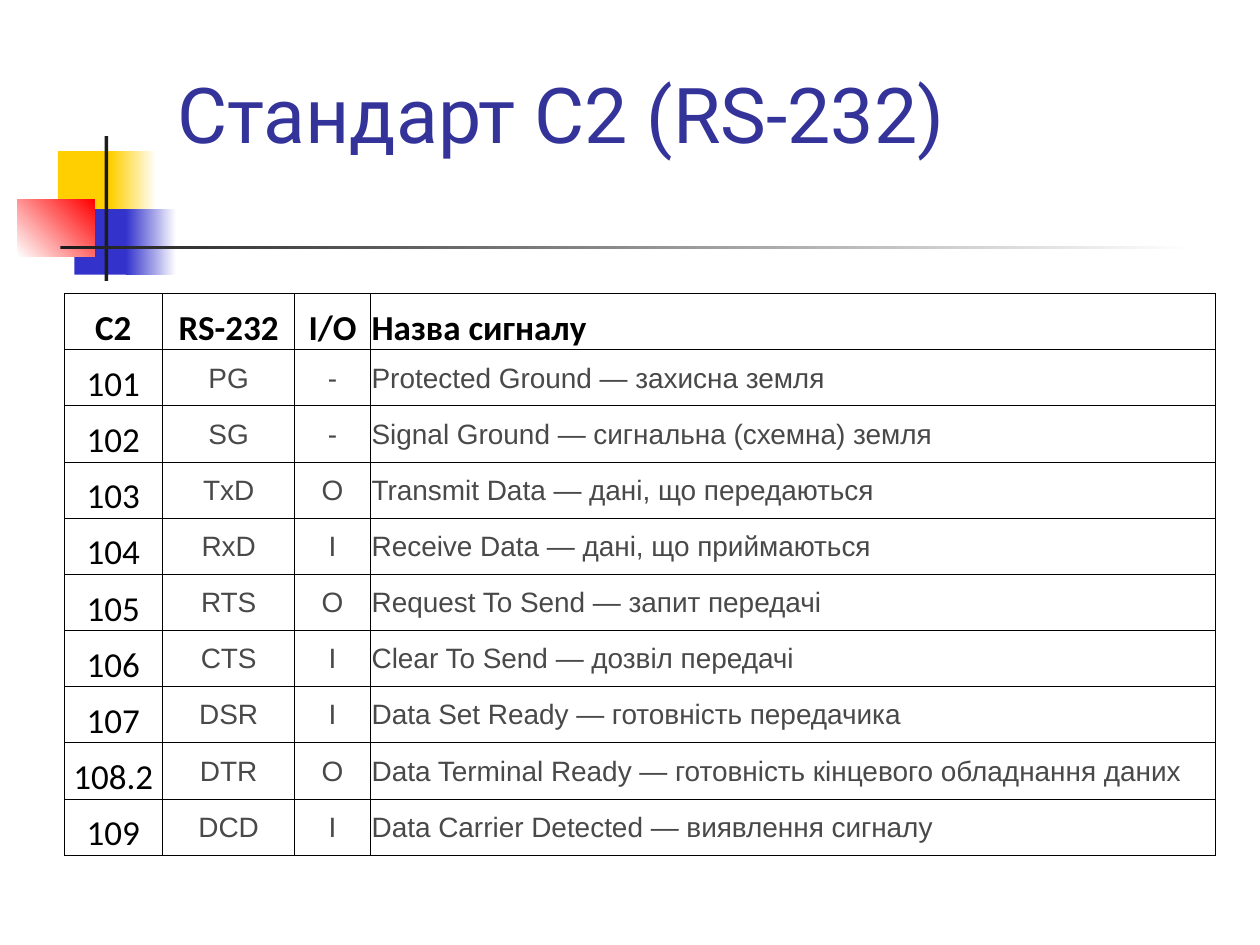
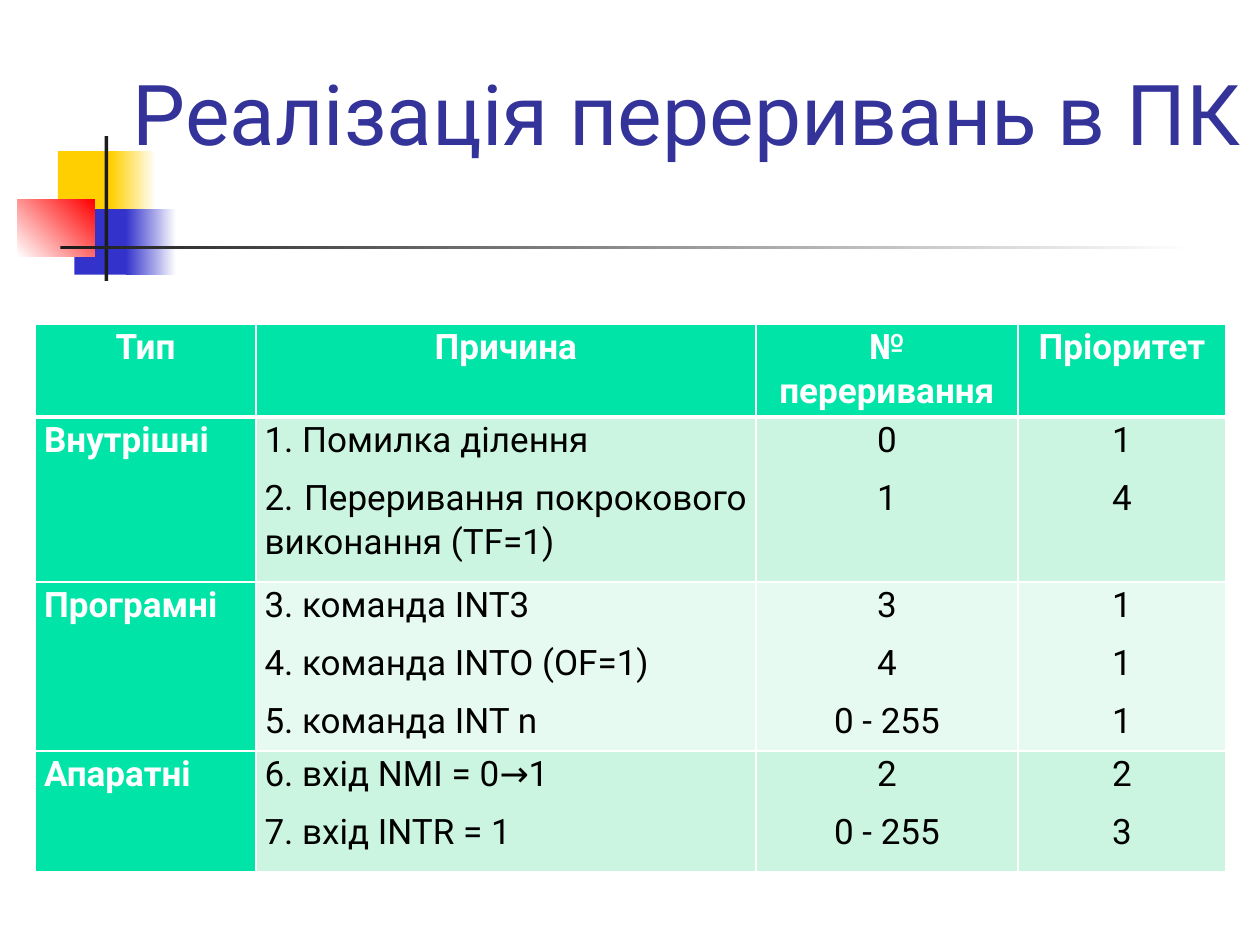
from lxml.etree import SubElement
from pptx import Presentation
from pptx.dml.color import RGBColor
from pptx.enum.shapes import MSO_SHAPE
from pptx.enum.text import MSO_ANCHOR, MSO_AUTO_SIZE, PP_ALIGN
from pptx.oxml.ns import qn
from pptx.util import Inches, Pt

# Shared look
WHITE, BLACK, DARK = "FFFFFF", "000000", "1C1C1C"
YELLOW, BLUE, RED = "FFCF01", "3333CC", "FF0000"
NAVY, GREY, GREEN = "333399", "494949", "00E4A8"
BANDS = ["CCF5E1", "E7FAF1"]
LEFT, MID, JUST = PP_ALIGN.LEFT, PP_ALIGN.CENTER, PP_ALIGN.JUSTIFY

# Corner motif: left, top, width, height, colours (two make a gradient), angle
MOTIF = [
    (0.46, 1.2, 0.48, 0.52, [YELLOW], 0),
    (0.88, 1.2, 0.36, 0.52, [YELLOW, WHITE], 0),
    (0.59, 1.66, 0.46, 0.52, [BLUE], 0),
    (1, 1.66, 0.4, 0.52, [BLUE, WHITE], 0),
    (0.14, 1.58, 0.61, 0.46, [WHITE, RED], 45),
    (0.83, 1.08, 0.03, 1.15, [DARK], 0),
    (0.48, 1.95, 9, 0.03, [DARK, WHITE], 0),
]

# Slide 1 content
SIGNALS = [
    ("С2", "RS-232", "І/О", "Назва сигналу"),
    ("101", "PG", "-", "Protected Ground — захисна земля"),
    ("102", "SG", "-", "Signal Ground — сигнальна (схемна) земля"),
    ("103", "TxD", "О", "Transmit Data — дані, що передаються"),
    ("104", "RxD", "І", "Receive Data — дані, що приймаються"),
    ("105", "RTS", "О", "Request To Send — запит передачі"),
    ("106", "CTS", "І", "Clear To Send — дозвіл передачі"),
    ("107", "DSR", "І", "Data Set Ready — готовність передачика"),
    ("108.2", "DTR", "O", "Data Terminal Ready — готовність кінцевого обладнання даних"),
    ("109", "DCD", "I", "Data Carrier Detected — виявлення сигналу"),
]

# Slide 2 content: one line of a cell is one paragraph
BREAKS = [
    ("Тип", "Причина", "№ переривання", "Пріоритет"),
    ("Внутрішні",
     "1. Помилка ділення\n2. Переривання покрокового виконання (TF=1)",
     "0\n1", "1\n4"),
    ("Програмні",
     "3. команда INT3\n4. команда INTO (OF=1)\n5. команда INT n",
     "3\n4\n0 - 255", "1\n1\n1"),
    ("Апаратні", "6. вхід NMI = 0→1\n7. вхід INTR = 1", "2\n0 - 255", "2\n3"),
]


def color(code):
    return RGBColor.from_string(code)


def write(par, text, size, font, code, bold=False):
    run = par.add_run()
    run.text = text
    run.font.size, run.font.name, run.font.bold = Pt(size), font, bold
    run.font.color.rgb = color(code)


def draw_motif(slide):
    for *box, codes, angle in MOTIF:
        part = slide.shapes.add_shape(MSO_SHAPE.RECTANGLE, *map(Inches, box))
        part.shadow.inherit = False
        part.line.fill.background()
        if len(codes) == 1:
            part.fill.solid()
            part.fill.fore_color.rgb = color(codes[0])
            continue
        part.fill.gradient()
        part.fill.gradient_angle = angle
        for stop, code in zip(part.fill.gradient_stops, codes):
            stop.color.rgb = color(code)


def add_page(deck, text, size, box):
    slide = deck.slides.add_slide(deck.slide_layouts[5])
    draw_motif(slide)
    title = slide.shapes.title
    slide.shapes._spTree.append(title._element)  # title above the motif
    title.left, title.top, title.width, title.height = map(Inches, box)
    frame = title.text_frame
    frame.auto_size, frame.word_wrap = MSO_AUTO_SIZE.NONE, True
    frame.vertical_anchor = MSO_ANCHOR.BOTTOM
    par = frame.paragraphs[0]
    par.alignment = MID
    write(par, text, size, "Roboto", NAVY)
    return slide


def set_edge(cell, side, code, width):
    edge = SubElement(cell._tc.get_or_add_tcPr(), qn("a:ln" + side), w=str(Pt(width)))
    fill = SubElement(edge, qn("a:solidFill"))
    SubElement(fill, qn("a:srgbClr"), val=code)


def add_grid(slide, rows, spot, cols, highs, style):
    """style(row, col) gives the look of one cell."""
    size = sum(cols), sum(highs)
    shape = slide.shapes.add_table(len(rows), len(cols), *map(Inches, (*spot, *size)))
    table = shape.table
    table.first_row = table.horz_banding = False
    for col, wide in zip(table.columns, cols):
        col.width = Inches(wide)
    for row, high in zip(table.rows, highs):
        row.height = Inches(high)
    for r, texts in enumerate(rows):
        for c, text in enumerate(texts):
            cell, look = table.cell(r, c), style(r, c)
            for side, width in zip("LRTB", look["edges"]):
                set_edge(cell, side, look["line"], width)
            if look["fill"]:
                cell.fill.solid()
                cell.fill.fore_color.rgb = color(look["fill"])
            else:
                cell.fill.background()
            cell.vertical_anchor = look["anchor"]
            (cell.margin_left, cell.margin_top, cell.margin_right,
             cell.margin_bottom) = map(Inches, look["inset"])
            frame = cell.text_frame
            for n, line in enumerate(text.split("\n")):
                par = frame.add_paragraph() if n else frame.paragraphs[0]
                par.alignment = look["align"]
                if "space" in look:
                    par.line_spacing, par.space_after = look["space"]
                write(par, line, *look["font"])


def signal_style(r, c):
    head, plain = r == 0, r > 0 and c > 0
    return {
        "line": BLACK, "edges": [0.5] * 4,
        "fill": WHITE if plain else None,
        "anchor": MSO_ANCHOR.MIDDLE if plain else MSO_ANCHOR.BOTTOM,
        "inset": (0.01, 0.01, 0.01, 0),
        "align": LEFT if c == 3 else MID,
        "font": (16, "Arial", GREY) if plain else (20, "Calibri", BLACK, head),
    }


def break_style(r, c):
    head = r == 0 or c == 0
    return {
        "line": WHITE,
        "edges": [1, 1, 3 if r == 1 else 1, 3 if r == 0 else 1],
        "fill": GREEN if head else BANDS[(r - 1) % 2],
        "anchor": MSO_ANCHOR.TOP,
        "inset": (0.07, 0, 0.07, 0),
        "align": JUST if r > 0 and c < 2 else MID,
        "space": (1.07, Pt(8)),
        "font": (20, "Roboto", WHITE if head else BLACK, head),
    }


def main():
    deck = Presentation()
    deck.slide_width, deck.slide_height = Inches(10), Inches(7.5)

    # Slide 1: signals
    slide = add_page(deck, "Стандарт С2 (RS-232)", 44, (0.28, 0.13, 8.35, 1.18))
    add_grid(slide, SIGNALS, (0.51, 2.33), [0.78, 1.05, 0.6, 6.71],
             [0.446] * len(SIGNALS), signal_style)

    # Slide 2: interrupts
    slide = add_page(deck, "Реалізація переривань в ПК", 48, (0.89, 0.36, 9.13, 0.98))
    add_grid(slide, BREAKS, (0.28, 2.57), [1.75, 3.97, 2.08, 1.65],
             [0.74, 1.31, 1.34, 0.96], break_style)

    deck.save("out.pptx")


if __name__ == "__main__":
    main()
